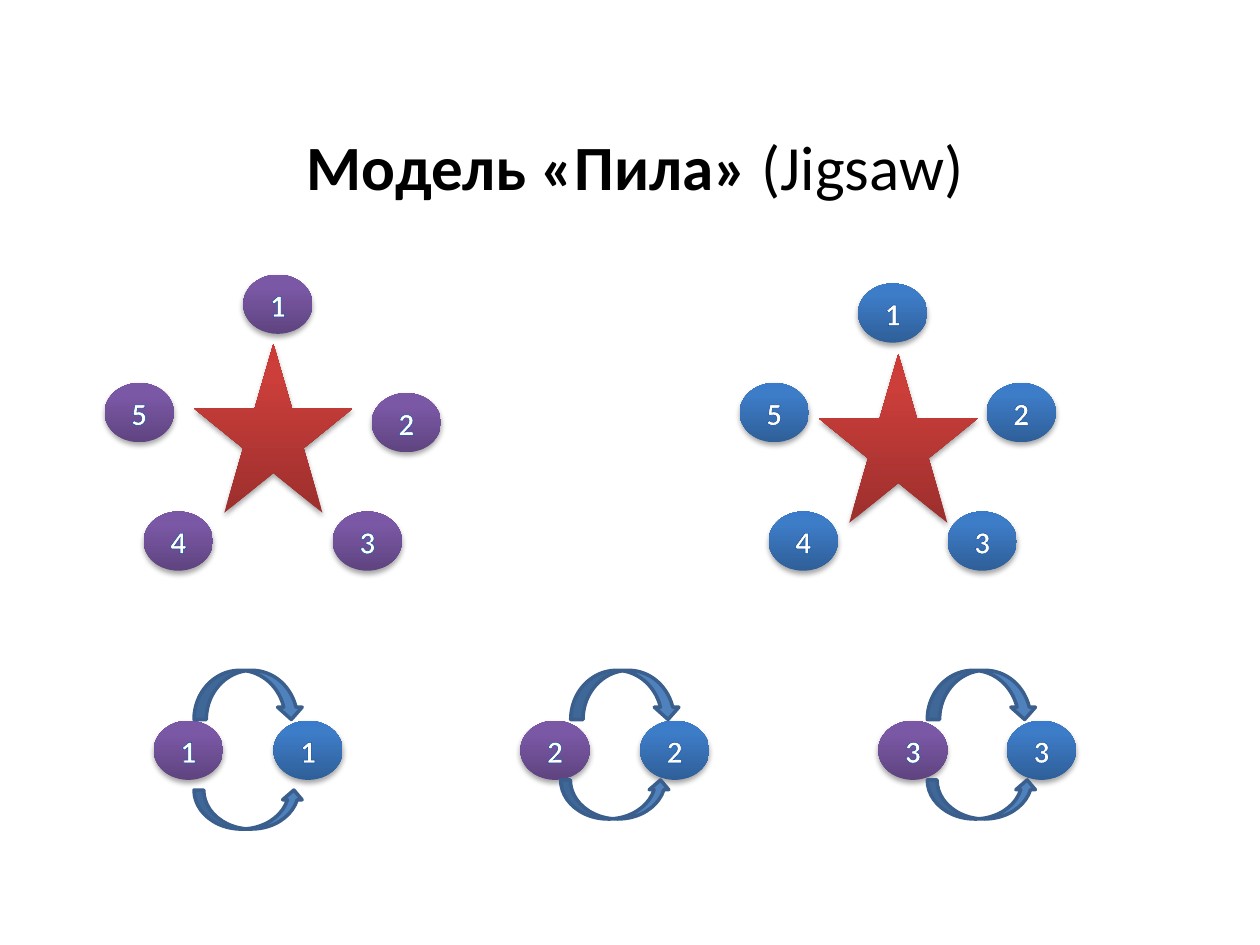
from copy import deepcopy

from lxml import etree
from pptx import Presentation
from pptx.dml.color import RGBColor
from pptx.enum.shapes import MSO_SHAPE as Shape
from pptx.enum.text import MSO_ANCHOR as Anchor, PP_ALIGN as Align
from pptx.oxml.ns import qn
from pptx.util import Inches, Pt

COLORS = {
    "title": "000000",
    "digit": "FFFFFF",
    "digit_outline": "054697",
    "shadow": "000000",
    "arrow": "4F81BD",
    "arrow_line": "3A5F8C",
}
GRADIENTS = {
    "purple": ("5F4480", "7B58A6", "7C57A8"),
    "blue": ("2F5F99", "3D7CC7", "3A7CCB"),
    "red": ("9C2F2D", "CB3E3A", "CE3B37"),
}


class JigsawSlide:
    """Draws the parts of the jigsaw model in one style on one slide."""

    font_name = "Calibri"
    stop_positions = (0, 0.8, 1)

    def __init__(self, slide):
        self.slide = slide

    def add_shape(self, kind, left, top, width, height):
        shape = self.slide.shapes.add_shape(
            kind, Inches(left), Inches(top), Inches(width), Inches(height)
        )
        shape.shadow.inherit = False
        return shape

    def add_color(self, parent, color):
        solid = etree.SubElement(parent, qn("a:solidFill"))
        return etree.SubElement(solid, qn("a:srgbClr"), val=COLORS[color])

    def add_glossy(self, kind, left, top, width, height, gradient):
        shape = self.add_shape(kind, left, top, width, height)
        shape.line.fill.background()
        shape.fill.gradient()
        shape.fill.gradient_angle = 90
        properties = shape.element.spPr
        stop_list = properties.find(f".//{qn('a:gsLst')}")
        stop_list.insert(1, deepcopy(stop_list[0]))
        stops = zip(shape.fill.gradient_stops, self.stop_positions, GRADIENTS[gradient])
        for stop, position, color in stops:
            stop.position = position
            stop.color.rgb = RGBColor.from_string(color)
        shadow = etree.SubElement(
            properties.find(qn("a:effectLst")), qn("a:outerShdw"),
            blurRad=str(Pt(3.1)), dist=str(Pt(1.8)), dir="5400000", rotWithShape="0",
        )
        tint = etree.SubElement(shadow, qn("a:srgbClr"), val=COLORS["shadow"])
        etree.SubElement(tint, qn("a:alpha"), val="35000")
        return shape

    def style_run(self, run, size, color, bold):
        run.font.name = self.font_name
        run.font.size = Pt(size)
        run.font.bold = bold
        run.font.color.rgb = RGBColor.from_string(COLORS[color])

    def add_title(self, name, note):
        box = self.slide.shapes.add_textbox(
            Inches(0.75), Inches(0.96), Inches(8.58), Inches(0.7)
        )
        frame = box.text_frame
        frame.word_wrap = True
        frame.vertical_anchor = Anchor.MIDDLE
        paragraph = frame.paragraphs[0]
        paragraph.alignment = Align.CENTER
        for text, bold in ((name, True), (note, False)):
            run = paragraph.add_run()
            run.text = text
            self.style_run(run, 36, "title", bold)

    def add_member(self, number, left, top, gradient):
        member = self.add_glossy(Shape.OVAL, left, top, 0.55, 0.47, gradient)
        frame = member.text_frame
        frame.text = str(number)
        frame.vertical_anchor = Anchor.MIDDLE
        paragraph = frame.paragraphs[0]
        paragraph.alignment = Align.CENTER
        run = paragraph.runs[0]
        self.style_run(run, 18, "digit", True)
        outline = etree.Element(qn("a:ln"), w=str(Pt(1)))
        self.add_color(outline, "digit_outline")
        run.font._element.insert(0, outline)

    def add_star(self, left, top):
        self.add_glossy(Shape.STAR_5_POINT, left, top, 1.26, 1.34, "red")

    def add_arrow(self, kind, left, top, height):
        arrow = self.add_shape(kind, left, top, 0.87, height)
        arrow.fill.solid()
        arrow.fill.fore_color.rgb = RGBColor.from_string(COLORS["arrow"])
        arrow.line.color.rgb = RGBColor.from_string(COLORS["arrow_line"])
        arrow.line.width = Pt(2)

    def add_group(self, gradient, star, seats):
        for number, (left, top) in enumerate(seats, start=1):
            self.add_member(number, left, top, gradient)
        self.add_star(*star)

    def add_exchange(self, number, purple_left, blue_left, over_left, under_left, under_top):
        self.add_member(number, purple_left, 5.72, "purple")
        self.add_member(number, blue_left, 5.72, "blue")
        self.add_arrow(Shape.CURVED_DOWN_ARROW, over_left, 5.32, 0.39)
        self.add_arrow(Shape.CURVED_UP_ARROW, under_left, under_top, 0.31)


def main():
    presentation = Presentation()
    presentation.slide_width = Inches(10)
    presentation.slide_height = Inches(7.5)
    jigsaw = JigsawSlide(presentation.slides.add_slide(presentation.slide_layouts[6]))

    jigsaw.add_title("Модель «Пила»", " (Jigsaw)")
    groups = (
        ("purple", (1.54, 2.73),
         ((1.93, 2.18), (2.95, 3.12), (2.64, 4.06), (1.14, 4.06), (0.83, 3.04))),
        ("blue", (6.5, 2.81),
         ((6.81, 2.25), (7.83, 3.04), (7.52, 4.06), (6.1, 4.06), (5.87, 3.04))),
    )
    for gradient, star, seats in groups:
        jigsaw.add_group(gradient, star, seats)

    exchanges = (
        (1.22, 2.17, 1.54, 1.54, 6.27),
        (4.13, 5.08, 4.53, 4.45, 6.19),
        (6.97, 7.99, 7.36, 7.36, 6.19),
    )
    for number, places in enumerate(exchanges, start=1):
        jigsaw.add_exchange(number, *places)

    presentation.save("out.pptx")


if __name__ == "__main__":
    main()
